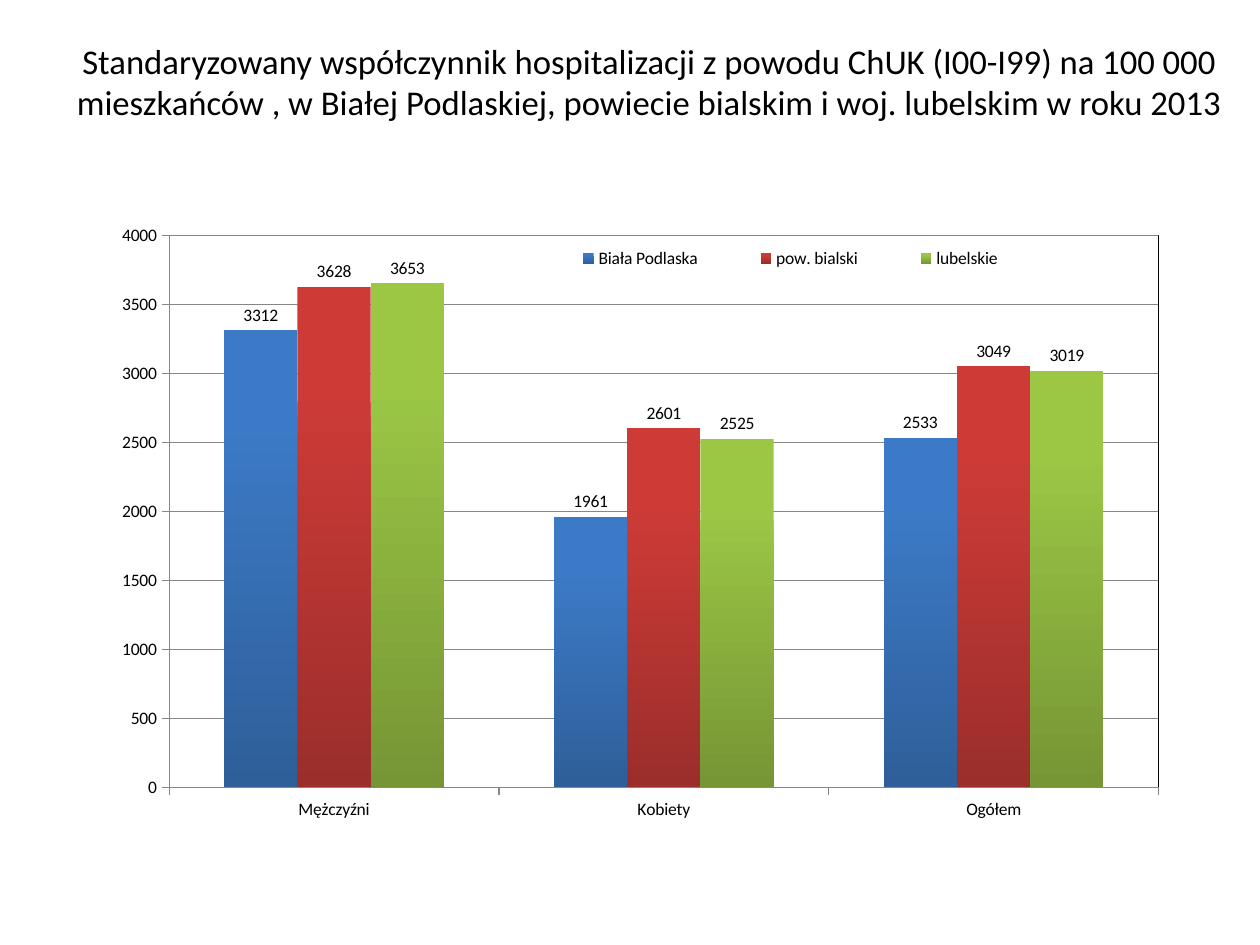
from lxml.etree import SubElement as Sub
from pptx import Presentation
from pptx.chart.data import CategoryChartData as Data
from pptx.dml.color import RGBColor as RGB
from pptx.enum.chart import XL_CHART_TYPE as Kind
from pptx.enum.chart import XL_LABEL_POSITION as Spot
from pptx.enum.chart import XL_LEGEND_POSITION as Side
from pptx.enum.chart import XL_TICK_MARK as Tick
from pptx.enum.text import MSO_ANCHOR as Anchor
from pptx.enum.text import PP_ALIGN as Align
from pptx.oxml import parse_xml
from pptx.oxml.ns import nsdecls, qn
from pptx.util import Pt

PX = 9144  # one px is a hundredth of an inch

THEME = {
    "font": "Calibri",
    "title": 19.8,
    "chart": 10,
    "ink": RGB.from_string("000000"),
    "grid": RGB.from_string("868686"),
    # top and bottom of each bar gradient
    "bars": [("3C7AC7", "2E5F99"), ("CE3B37", "9B2E2B"), ("9BC745", "769535")],
}


def style(font, size):
    font.name = THEME["font"]
    font.size = Pt(size)
    font.color.rgb = THEME["ink"]


def place(node, index, target, **box):
    """Pin a chart part at fractions of the chart's size."""
    for old in node.findall(qn("c:layout")):
        node.remove(old)
    layout = parse_xml(f"<c:layout {nsdecls('c')}/>")
    manual = Sub(layout, qn("c:manualLayout"))
    if target:
        Sub(manual, qn("c:layoutTarget")).set("val", target)
    for key in ("xMode", "yMode"):
        Sub(manual, qn(f"c:{key}")).set("val", "edge")
    for key, val in box.items():
        Sub(manual, qn(f"c:{key}")).set("val", str(val))
    node.insert(index, layout)


deck = Presentation()
deck.slide_width, deck.slide_height = 1000 * PX, 750 * PX
slide = deck.slides.add_slide(deck.slide_layouts[6])

# Title
title = slide.shapes.add_textbox(50 * PX, 30 * PX, 930 * PX, 69 * PX)
frame = title.text_frame
frame.word_wrap = True
frame.vertical_anchor = Anchor.MIDDLE
frame.margin_top = frame.margin_bottom = 0
frame.margin_left = frame.margin_right = 5 * PX
frame.text = (
    "Standaryzowany współczynnik hospitalizacji z powodu ChUK (I00-I99) "
    "na 100 000 mieszkańców , w Białej Podlaskiej, powiecie bialskim "
    "i woj. lubelskim w roku 2013"
)
para = frame.paragraphs[0]
para.alignment = Align.CENTER
style(para.runs[0].font, THEME["title"])

# Chart data
data = Data(number_format="0")
data.categories = ["Mężczyźni", "Kobiety", "Ogółem"]
data.add_series("Biała Podlaska", (3312, 1961, 2533))
data.add_series("pow. bialski", (3628, 2601, 3049))
data.add_series("lubelskie", (3653, 2525, 3019))
chart = slide.shapes.add_chart(
    Kind.COLUMN_CLUSTERED, 43 * PX, 155 * PX, 913 * PX, 528 * PX, data
).chart
chart.has_title = False
style(chart.font, THEME["chart"])

# Bars and value labels
plot = chart.plots[0]
plot.gap_width = 150
plot.overlap = 0
plot.vary_by_categories = False
for bar, shades in zip(plot.series, THEME["bars"]):
    fill = bar.format.fill
    fill.gradient()
    fill.gradient_angle = 270
    for stop, shade, pos in zip(fill.gradient_stops, shades, (0.2, 1)):
        stop.color.rgb = RGB.from_string(shade)
        stop.position = pos
    bar.invert_if_negative = False
    tags = bar.data_labels
    tags.show_value = True
    tags.number_format = "0"
    tags.number_format_is_linked = False
    tags.position = Spot.OUTSIDE_END
    style(tags.font, THEME["chart"])

# Axes and grid
value = chart.value_axis
value.minimum_scale, value.maximum_scale, value.major_unit = 0, 4000, 500
value.has_major_gridlines = True
value.tick_labels.number_format = "0"
value.tick_labels.number_format_is_linked = False
for axis in (value, chart.category_axis):
    axis.major_tick_mark = Tick.OUTSIDE
    axis.minor_tick_mark = Tick.NONE
    style(axis.tick_labels.font, THEME["chart"])
for part in (value, chart.category_axis, value.major_gridlines):
    part.format.line.color.rgb = THEME["grid"]
    part.format.line.width = Pt(0.75)

# Plot area with its thin frame
area = chart._chartSpace.chart.plotArea
place(area, 0, "inner", x=0.1, y=0.06, w=0.86, h=0.83)
area.append(parse_xml(
    f"<c:spPr {nsdecls('c', 'a')}><a:noFill/><a:ln w='9525'><a:solidFill>"
    f"<a:srgbClr val='{THEME['ink']}'/></a:solidFill></a:ln></c:spPr>"
))

# Legend laid over the upper right of the plot
chart.has_legend = True
legend = chart.legend
legend.position = Side.RIGHT
legend.include_in_layout = False
style(legend.font, THEME["chart"])
place(legend._element, 1, None, x=0.41, y=0.07, w=0.46, h=0.05)

deck.save("out.pptx")
